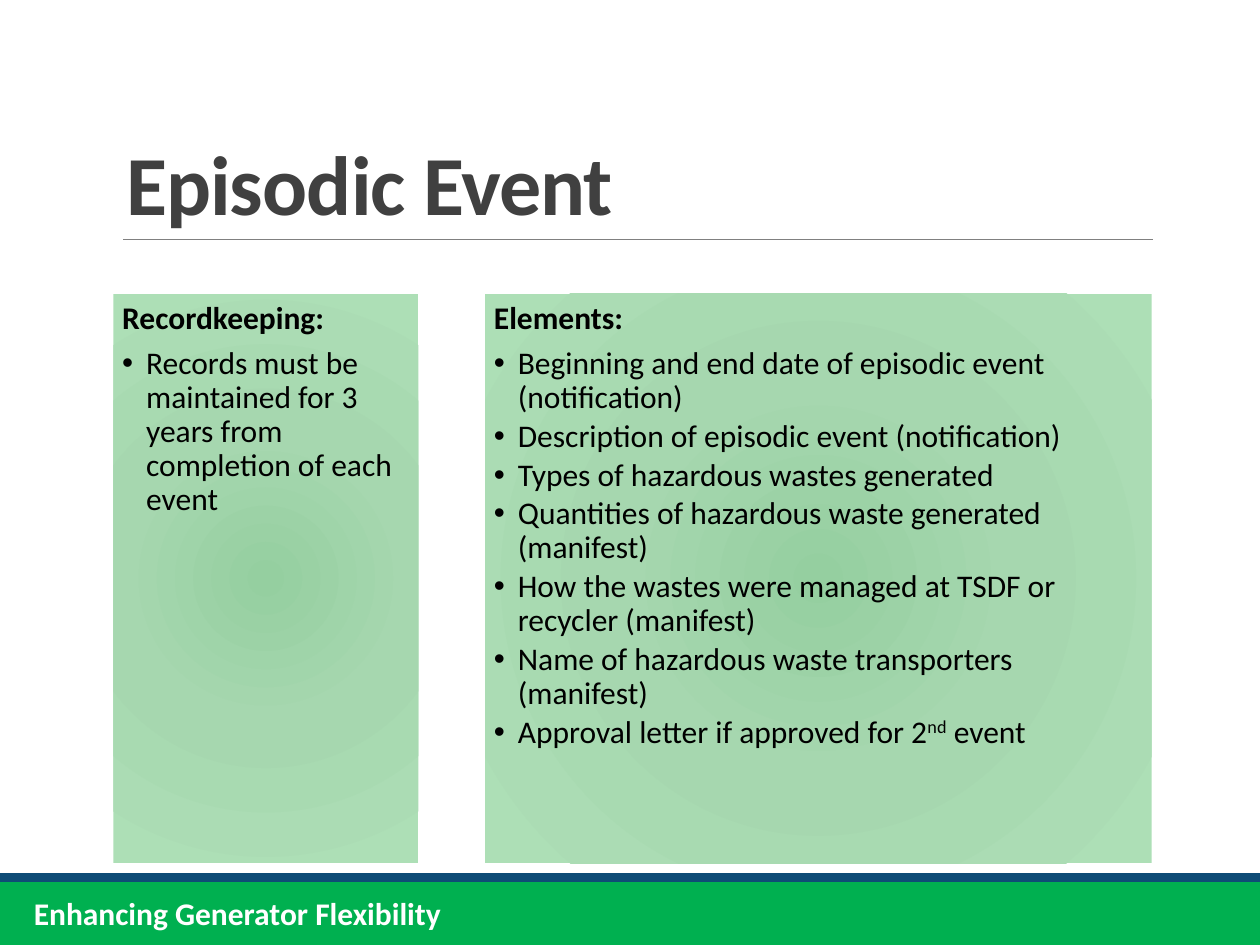
from lxml.etree import SubElement
from pptx import Presentation
from pptx.dml.color import RGBColor
from pptx.enum.shapes import MSO_CONNECTOR, MSO_SHAPE
from pptx.enum.text import MSO_ANCHOR, MSO_AUTO_SIZE, PP_ALIGN
from pptx.oxml import parse_xml
from pptx.oxml.ns import nsdecls, qn
from pptx.util import Inches, Pt

GREEN = RGBColor(0x00, 0xB0, 0x50)
NAVY = RGBColor(0x0F, 0x4C, 0x76)
GRAY = RGBColor(0x80, 0x80, 0x80)
DARK = RGBColor(0x40, 0x40, 0x40)
BLACK = RGBColor(0x00, 0x00, 0x00)
WHITE = RGBColor(0xFF, 0xFF, 0xFF)
PANEL_STOPS = [
    (0, RGBColor(0x95, 0xCF, 0xA0)),
    (45, RGBColor(0xA6, 0xD7, 0xAF)),
    (100, RGBColor(0xAD, 0xDF, 0xB6)),
]

TITLE = "Episodic Event"
FOOTER = "Enhancing Generator Flexibility"
PANELS = [
    ("Recordkeeping:", 0.9, 2.42, [
        ["Records must be maintained for 3 years from completion of each event"],
    ]),
    ("Elements:", 3.85, 5.29, [
        ["Beginning and end date of episodic event (notification)"],
        ["Description of episodic event (notification)"],
        ["Types of hazardous wastes generated"],
        ["Quantities of hazardous waste generated (manifest)"],
        ["How the wastes were managed at TSDF or recycler (manifest)"],
        ["Name of hazardous waste transporters (manifest)"],
        ["Approval letter if approved for 2", "nd", " event"],
    ]),
]
PANEL_TOP, PANEL_HEIGHT = 2.33, 4.52
BARS = [(7, 0.5, GREEN), (6.93, 0.07, NAVY)]


def add_text(p, text, size=18, color=BLACK, bold=False, spacing=None, raised=False):
    r = p.add_run()
    r.text = text
    r.font.name = "Calibri"
    r.font.size = Pt(size)
    r.font.bold = bold
    r.font.color.rgb = color
    if spacing is not None:
        r._r.get_or_add_rPr().set("spc", str(int(spacing * 100)))
    if raised:
        r._r.get_or_add_rPr().set("baseline", "30000")


def place(sp, left, top, width, height):
    sp.left, sp.top = Inches(left), Inches(top)
    sp.width, sp.height = Inches(width), Inches(height)


def format_paragraph(p, after, bullet=False):
    p.alignment = PP_ALIGN.LEFT
    p.line_spacing = 0.9
    p.space_before = Pt(0)
    p.space_after = Pt(after)
    pPr = p._p.get_or_add_pPr()
    indent = Inches(0.19) if bullet else 0
    pPr.set("marL", str(indent))
    pPr.set("indent", str(-indent))
    if bullet:
        p.level = 1
        SubElement(pPr, qn("a:buChar")).set("char", "•")
    else:
        SubElement(pPr, qn("a:buNone"))


def fill_radial(sp):
    stops = "".join(
        f'<a:gs pos="{pos * 1000}"><a:srgbClr val="{color}"/></a:gs>'
        for pos, color in PANEL_STOPS
    )
    sp._element.spPr.append(parse_xml(
        f'<a:gradFill {nsdecls("a")} rotWithShape="1"><a:gsLst>{stops}</a:gsLst>'
        '<a:path path="circle"><a:fillToRect l="100000" t="100000" '
        'r="100000" b="100000"/></a:path></a:gradFill>'
    ))


def add_panel(sp, heading, left, width, items):
    place(sp, left, PANEL_TOP, width, PANEL_HEIGHT)
    fill_radial(sp)
    tf = sp.text_frame
    tf.auto_size = MSO_AUTO_SIZE.NONE
    tf.vertical_anchor = MSO_ANCHOR.TOP
    tf.margin_left = tf.margin_right = Inches(0.07)
    tf.margin_top = tf.margin_bottom = Inches(0.07)
    p = tf.paragraphs[0]
    format_paragraph(p, 6.3)
    add_text(p, heading, bold=True)
    for item in items:
        p = tf.add_paragraph()
        format_paragraph(p, 2.7, bullet=True)
        for i, part in enumerate(item):
            add_text(p, part, raised=i == 1)


def main():
    prs = Presentation()
    prs.slide_width, prs.slide_height = Inches(10), Inches(7.5)
    s = prs.slides.add_slide(prs.slide_layouts[3])

    title = s.shapes.title
    place(title, 0.9, 0.31, 8.25, 1.59)
    tf = title.text_frame
    tf.auto_size = MSO_AUTO_SIZE.NONE
    tf.vertical_anchor = MSO_ANCHOR.BOTTOM
    p = tf.paragraphs[0]
    p.alignment = PP_ALIGN.LEFT
    p.line_spacing = 0.85
    add_text(p, TITLE, size=48, color=DARK, bold=True, spacing=-0.5)

    for idx, panel in enumerate(PANELS, start=1):
        add_panel(s.placeholders[idx], *panel)

    for top, height, color in BARS:
        sp = s.shapes.add_shape(
            MSO_SHAPE.RECTANGLE, 0, Inches(top), prs.slide_width, Inches(height))
        sp.shadow.inherit = False
        sp.fill.solid()
        sp.fill.fore_color.rgb = color
        sp.line.fill.background()

    rule = s.shapes.add_connector(
        MSO_CONNECTOR.STRAIGHT, Inches(0.98), Inches(1.9), Inches(9.15), Inches(1.9))
    rule.line.color.rgb = GRAY
    rule.line.width = Pt(0.5)
    SubElement(rule._element.spPr, qn("a:effectLst"))

    footer = s.shapes.add_textbox(Inches(0.17), Inches(7.05), Inches(3.46), Inches(0.4))
    tf = footer.text_frame
    tf.word_wrap = False
    tf.auto_size = MSO_AUTO_SIZE.SHAPE_TO_FIT_TEXT
    add_text(tf.paragraphs[0], FOOTER, color=WHITE, bold=True)

    prs.save("out.pptx")


if __name__ == "__main__":
    main()
